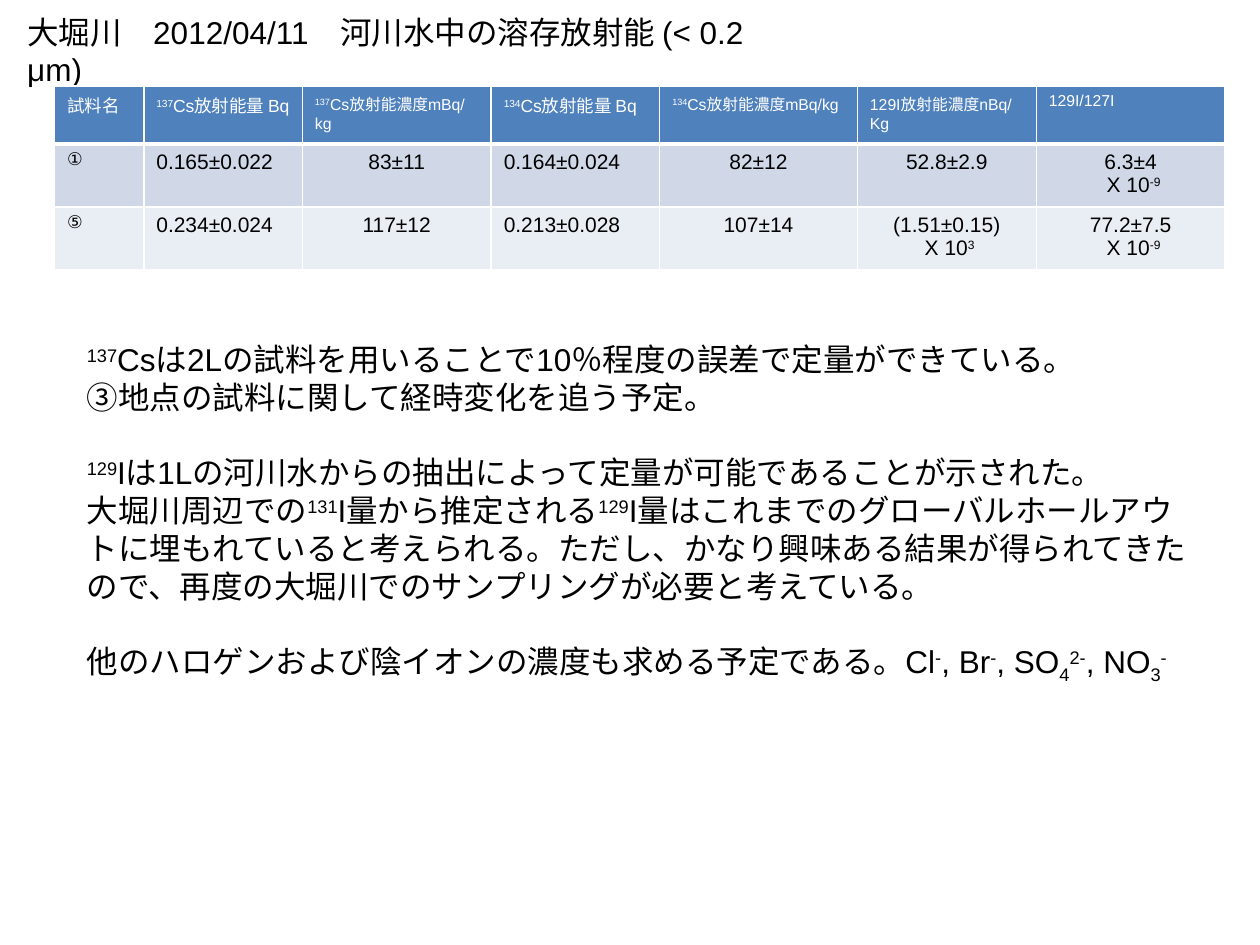
import lxml.etree
import pptx
import pptx.dml.color
import pptx.enum.text
import pptx.oxml.ns
import pptx.util

Cm = pptx.util.Cm
Pt = pptx.util.Pt
RGBColor = pptx.dml.color.RGBColor
PP_ALIGN = pptx.enum.text.PP_ALIGN
qn = pptx.oxml.ns.qn

BLACK = RGBColor(0x00, 0x00, 0x00)
WHITE = RGBColor(0xFF, 0xFF, 0xFF)
HEADER_BLUE = RGBColor(0x4F, 0x81, 0xBD)
BAND_COLOURS = [RGBColor(0xD0, 0xD8, 0xE8), RGBColor(0xE9, 0xED, 0xF4)]
BASELINES = {"^": "30000", "_": "-25000"}

TITLE = "大堀川\u30002012/04/11\u3000河川水中の溶存放射能 (< 0.2 μm)".replace("\\u3000", "　")
COLUMN_WIDTHS = [1.8, 3.2, 3.81, 3.4, 3.99, 3.61, 3.81]
ROW_HEIGHTS = [1.17, 1.27, 1.27]
HEADER_SIZES = [10, 10, 9, 10, 9, 9, 9]
CENTRED_COLUMNS = {2, 4, 5, 6}
HEADERS = [
    "試料名",
    "^137|Cs放射能量 Bq",
    "^137|Cs放射能濃度mBq/kg",
    "^134|Cs放射能量 Bq",
    "^134|Cs放射能濃度mBq/kg",
    "129I放射能濃度nBq/Kg",
    "129I/127I",
]
SAMPLES = [
    ["①", "0.165±0.022", "83±11", "0.164±0.024", "82±12", "52.8±2.9",
     "6.3±4\n X 10|^-9"],
    ["⑤", "0.234±0.024", "117±12", "0.213±0.028", "107±14",
     "(1.51±0.15)\n X 10|^3", "77.2±7.5\n X 10|^-9"],
]
DISCUSSION = [
    ["^137|Csは2Lの試料を用いることで10％程度の誤差で定量ができている。",
     "③地点の試料に関して経時変化を追う予定。"],
    ["^129|Iは1Lの河川水からの抽出によって定量が可能であることが示された。",
     "大堀川周辺での|^131|I量から推定される|^129|I量はこれまでのグローバルホールアウトに"
     "埋もれていると考えられる。ただし、かなり興味ある結果が得られてきたので、"
     "再度の大堀川でのサンプリングが必要と考えている。"],
    ["他のハロゲンおよび陰イオンの濃度も求める予定である。Cl|^-|, Br|^-|, SO|_4|^2-|, NO|_3|^-"],
]


def write_paragraph(paragraph, text, size, colour=BLACK):
    for piece in text.split("|"):
        run = paragraph.add_run()
        run.text = piece.lstrip("^_")
        if piece[0] in BASELINES:
            run._r.get_or_add_rPr().set("baseline", BASELINES[piece[0]])
    paragraph.font.name = "Arial"
    paragraph.font.size = Pt(size)
    paragraph.font.color.rgb = colour


def write_lines(text_frame, lines, size, colour=BLACK):
    for index, line in enumerate(lines):
        paragraph = text_frame.add_paragraph() if index else text_frame.paragraphs[0]
        write_paragraph(paragraph, line, size, colour)


def add_text_box(slide, left, top, width, height):
    text_frame = slide.shapes.add_textbox(left, top, width, height).text_frame
    text_frame.word_wrap = True
    text_frame.auto_size = pptx.enum.text.MSO_AUTO_SIZE.SHAPE_TO_FIT_TEXT
    return text_frame


def add_title(slide, left, top, width, height):
    write_lines(add_text_box(slide, left, top, width, height), [TITLE], 18)


def add_discussion(slide, left, top, width, height):
    text_frame = add_text_box(slide, left, top, width, height)
    write_lines(text_frame, [line for group in DISCUSSION for line in group], 18)
    position = 0
    for group in DISCUSSION[:-1]:
        position += len(group)
        text_frame.paragraphs[position].space_before = Pt(21.5)


def set_borders(cell, bottom_width):
    properties = cell._tc.get_or_add_tcPr()
    widths = {"a:lnL": 1, "a:lnR": 1, "a:lnT": 1, "a:lnB": bottom_width}
    for index, (tag, width) in enumerate(widths.items()):
        line = lxml.etree.Element(qn(tag), w=str(Pt(width)))
        fill = lxml.etree.SubElement(line, qn("a:solidFill"))
        lxml.etree.SubElement(fill, qn("a:srgbClr"), val=str(WHITE))
        properties.insert(index, line)


def fill_cell(cell, text, size, colour, background, bottom_width, centred):
    cell.fill.solid()
    cell.fill.fore_color.rgb = background
    set_borders(cell, bottom_width)
    write_lines(cell.text_frame, text.split("\n"), size, colour)
    if centred:
        for paragraph in cell.text_frame.paragraphs:
            paragraph.alignment = PP_ALIGN.CENTER


def add_activity_table(slide, left, top, width, height):
    table = slide.shapes.add_table(
        len(ROW_HEIGHTS), len(COLUMN_WIDTHS), left, top, width, height).table
    table.first_row = False
    table.horz_banding = False
    table_properties = table._tbl.tblPr
    table_properties.remove(table_properties.find(qn("a:tableStyleId")))
    for column, share in zip(table.columns, COLUMN_WIDTHS):
        column.width = int(width * share / sum(COLUMN_WIDTHS))
    for row, share in zip(table.rows, ROW_HEIGHTS):
        row.height = int(height * share / sum(ROW_HEIGHTS))
    for column, (text, size) in enumerate(zip(HEADERS, HEADER_SIZES)):
        fill_cell(table.cell(0, column), text, size, WHITE, HEADER_BLUE, 3, False)
    for row, (sample, background) in enumerate(zip(SAMPLES, BAND_COLOURS), 1):
        for column, text in enumerate(sample):
            fill_cell(table.cell(row, column), text, 12 if column else 10, BLACK,
                      background, 1, column in CENTRED_COLUMNS)


def main():
    presentation = pptx.Presentation()
    presentation.slide_width = Cm(25.4)
    presentation.slide_height = Cm(19.05)
    slide = presentation.slides.add_slide(presentation.slide_layouts[6])
    add_title(slide, Cm(0.3), Cm(0.13), Cm(16), Cm(1.02))
    add_activity_table(slide, Cm(1.1), Cm(1.73), Cm(23.6), Cm(3.71))
    add_discussion(slide, Cm(1.5), Cm(6.73), Cm(23), Cm(6.93))
    presentation.save("out.pptx")


if __name__ == "__main__":
    main()
